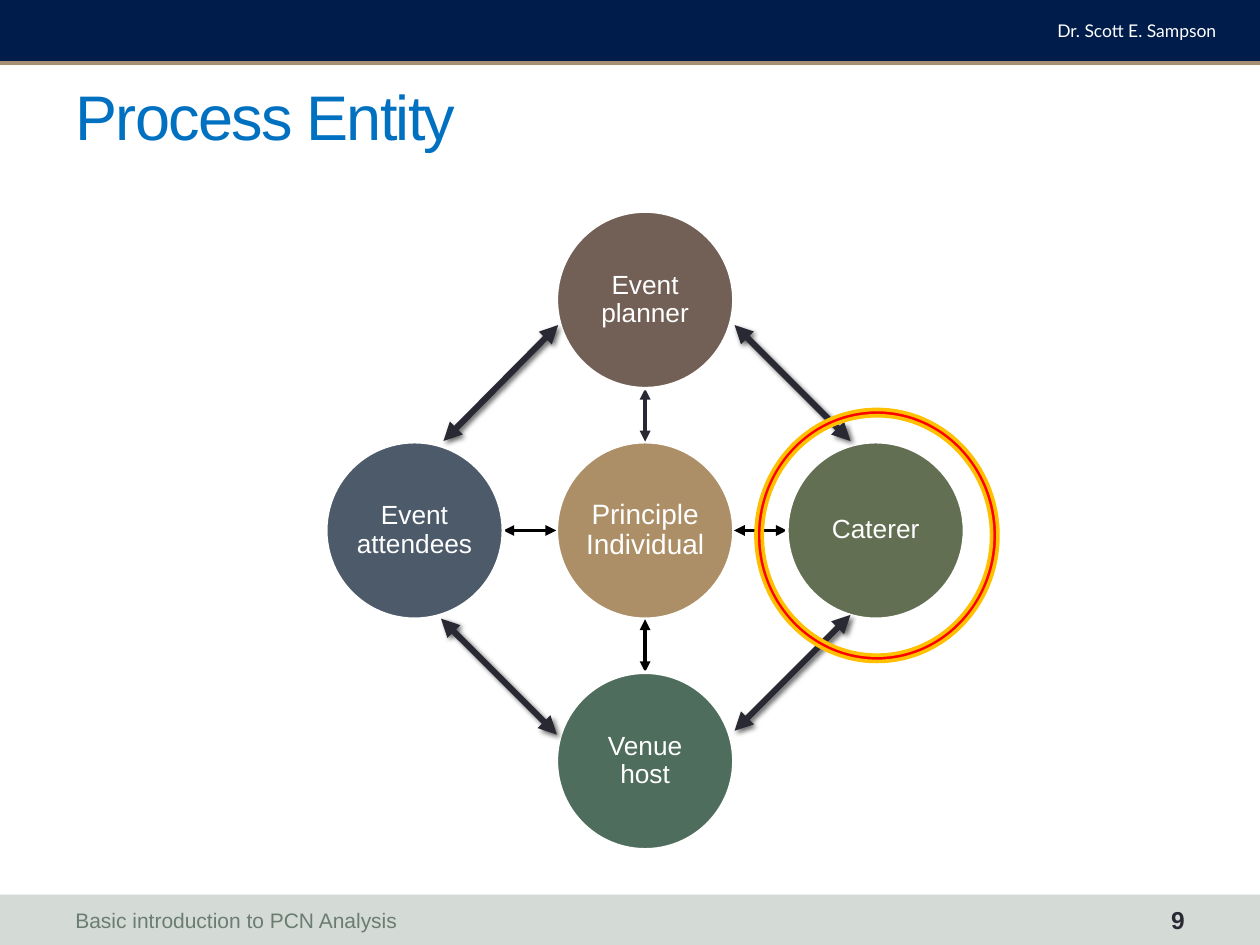
from lxml.etree import SubElement
from pptx import Presentation
from pptx.dml.color import RGBColor
from pptx.enum.shapes import MSO_CONNECTOR as Connector, MSO_SHAPE as Shape
from pptx.enum.text import MSO_ANCHOR as Anchor, PP_ALIGN as Align
from pptx.oxml.ns import qn
from pptx.util import Inches, Pt

WHITE = RGBColor(0xFF, 0xFF, 0xFF)
BLACK = RGBColor(0x00, 0x00, 0x00)
NAVY = RGBColor(0x00, 0x1C, 0x4A)
TAN = RGBColor(0xA6, 0x90, 0x73)
PALE_GREEN = RGBColor(0xD4, 0xDA, 0xD6)
FOOTER_GREEN = RGBColor(0x6B, 0x7D, 0x72)
TITLE_BLUE = RGBColor(0x00, 0x70, 0xC0)
CHARCOAL = RGBColor(0x29, 0x29, 0x34)
GOLD = RGBColor(0xAD, 0x8F, 0x67)
BROWN = RGBColor(0x72, 0x60, 0x56)
OLIVE = RGBColor(0x63, 0x6F, 0x53)
GREEN = RGBColor(0x4F, 0x6D, 0x5D)
SLATE = RGBColor(0x4C, 0x5A, 0x6A)
RED = RGBColor(0xFF, 0x00, 0x00)
AMBER = RGBColor(0xFF, 0xC0, 0x00)

CENTER_X, CENTER_Y = 5.12, 4.21
STEP = 1.83
DIAMETER = 1.41
THIN = 2.08
ENTITIES = [
    ("Event planner", BROWN, 0, -1, CHARCOAL),
    ("Caterer", OLIVE, 1, 0, BLACK),
    ("Venue host", GREEN, 0, 1, BLACK),
    ("Event attendees", SLATE, -1, 0, BLACK),
]
OUTER_LINKS = [
    (5.83, 2.58, 6.75, 3.5),
    (3.5, 4.91, 4.42, 5.83),
    (4.43, 2.58, 3.52, 3.5),
    (6.75, 4.88, 5.83, 5.8),
]


def write(shape, text, size, color, font="Arial", bold=False, align=Align.LEFT,
          anchor=Anchor.MIDDLE, inset=None, line_spacing=None, tracking=None):
    """Put one formatted paragraph into a shape."""
    frame = shape.text_frame
    frame.word_wrap = True
    frame.vertical_anchor = anchor
    if inset is not None:
        frame.margin_left = frame.margin_right = Inches(inset)
        frame.margin_top = frame.margin_bottom = Inches(inset)
    paragraph = frame.paragraphs[0]
    paragraph.alignment = align
    if line_spacing:
        paragraph.line_spacing = line_spacing
    run = paragraph.add_run()
    run.text = text
    run.font.name = font
    run.font.size = Pt(size)
    run.font.bold = bold
    run.font.color.rgb = color
    if tracking:
        run.font._element.set("spc", str(tracking * 100))


def add_label(slide, text, left, top, width, height, **style):
    """Add a text box."""
    label = slide.shapes.add_textbox(*map(Inches, (left, top, width, height)))
    write(label, text, **style)


def add_figure(slide, preset, left, top, width, height, fill, line=None):
    """Add a filled preset shape with an optional outline."""
    figure = slide.shapes.add_shape(preset, *map(Inches, (left, top, width, height)))
    figure.shadow.inherit = False
    figure.fill.solid()
    figure.fill.fore_color.rgb = fill
    if line is None:
        figure.line.fill.background()
    else:
        figure.line.color.rgb = line
        figure.line.width = Pt(THIN)
    return figure


def add_line(slide, ends, color, width, arrows=False, shadow=False):
    """Add a straight line, optionally double-headed and shadowed."""
    link = slide.shapes.add_connector(Connector.STRAIGHT, *map(Inches, ends))
    link.line.color.rgb = color
    link.line.width = Pt(width)
    if arrows:
        stroke = link.line._get_or_add_ln()
        for end in ("a:headEnd", "a:tailEnd"):
            SubElement(stroke, qn(end), type="triangle")
    effects = SubElement(link._element.spPr, qn("a:effectLst"))
    if shadow:
        outer = SubElement(effects, qn("a:outerShdw"), blurRad=str(Pt(3)),
                           dist=str(Pt(2)), dir="2700000", rotWithShape="0")
        tint = SubElement(outer, qn("a:srgbClr"), val=str(BLACK))
        SubElement(tint, qn("a:alpha"), val="60000")


def add_entity(slide, text, x, y, fill, size):
    """Add a labelled circle centred on a point."""
    radius = DIAMETER / 2
    circle = add_figure(slide, Shape.OVAL, x - radius, y - radius,
                        DIAMETER, DIAMETER, fill, WHITE)
    write(circle, text, size, WHITE, align=Align.CENTER, inset=0.01, line_spacing=0.9)


def add_frame(slide):
    """Add the header, title and footer."""
    add_figure(slide, Shape.RECTANGLE, 0, 7.1, 10, 0.4, PALE_GREEN)
    add_figure(slide, Shape.RECTANGLE, 0, 0, 10, 0.5, NAVY)
    add_line(slide, (0, 0.5, 10, 0.5), TAN, 2)
    add_label(slide, "Dr. Scott E. Sampson", 7.83, 0.11, 1.92, 0.28, size=10,
              color=WHITE, font="Lato", align=Align.RIGHT, anchor=Anchor.TOP)
    title = slide.shapes.title
    title.left, title.top = Inches(0.5), Inches(0.58)
    title.width, title.height = Inches(9), Inches(0.67)
    write(title, "Process Entity", 36, TITLE_BLUE, tracking=-1)
    add_label(slide, "Basic introduction to PCN Analysis", 0.5, 7.12, 6.67, 0.36,
              size=12, color=FOOTER_GREEN)
    add_label(slide, "9", 8.75, 7.12, 0.75, 0.36, size=14, color=CHARCOAL,
              bold=True, align=Align.RIGHT)


def add_network(slide):
    """Add the central entity, its partners and all links."""
    add_entity(slide, "Principle Individual", CENTER_X, CENTER_Y, GOLD, 16)
    near, far = DIAMETER / 2, STEP - DIAMETER / 2
    for text, fill, dx, dy, link_color in ENTITIES:
        spoke = (CENTER_X + dx * near, CENTER_Y + dy * near,
                 CENTER_X + dx * far, CENTER_Y + dy * far)
        add_line(slide, spoke, link_color, THIN, arrows=True)
        add_entity(slide, text, CENTER_X + dx * STEP, CENTER_Y + dy * STEP, fill, 15)
    for ends in OUTER_LINKS:
        add_line(slide, ends, CHARCOAL, 3.5, arrows=True, shadow=True)
    highlight = add_figure(slide, Shape.DONUT, 6, 3.25, 1.92, 2, RED, AMBER)
    highlight.adjustments[0] = 0.026


def main():
    """Build and save the slide."""
    deck = Presentation()
    deck.slide_width, deck.slide_height = Inches(10), Inches(7.5)
    slide = deck.slides.add_slide(deck.slide_layouts[5])
    add_frame(slide)
    add_network(slide)
    deck.save("out.pptx")


if __name__ == "__main__":
    main()
